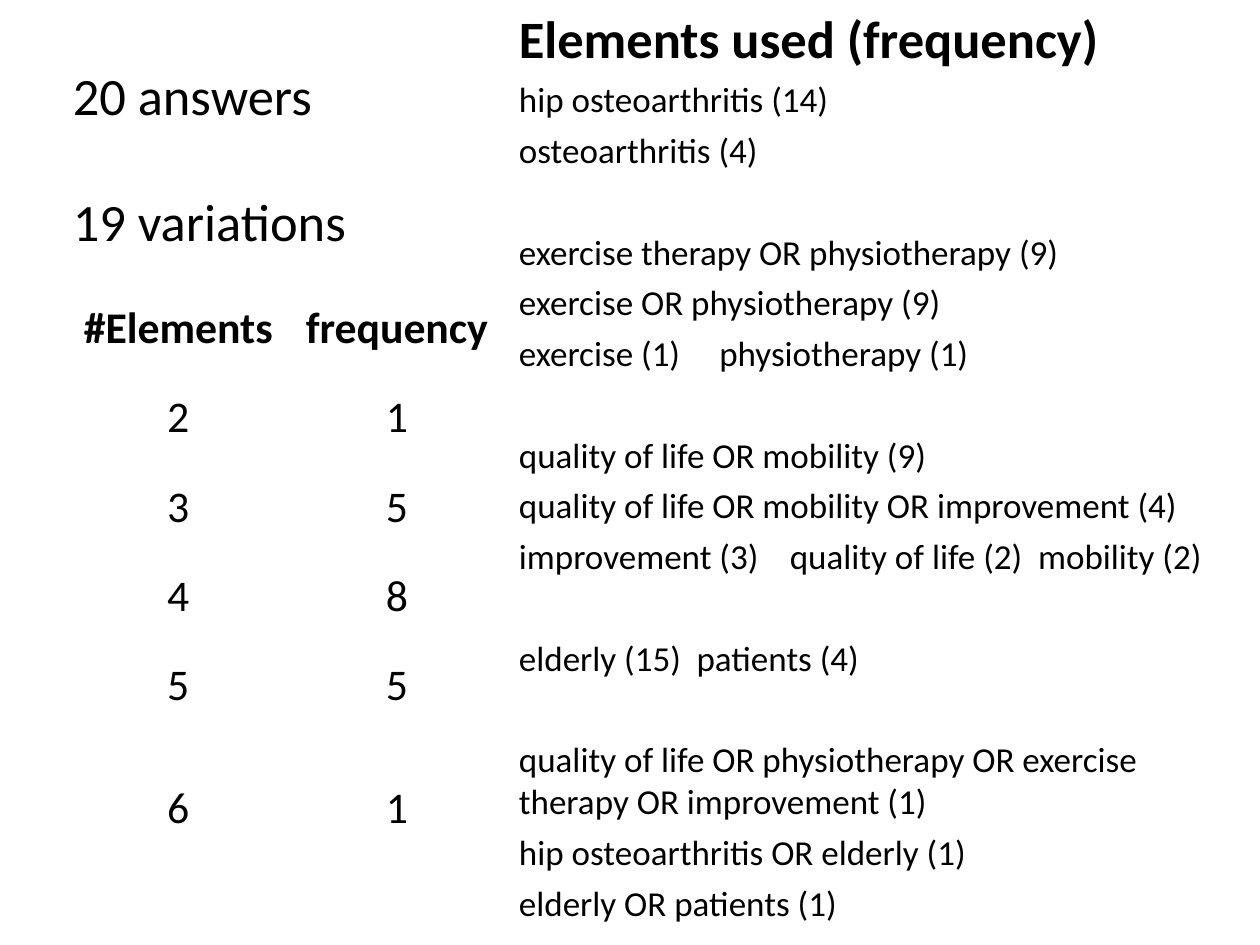
from dataclasses import dataclass

from lxml import etree
from pptx import Presentation
from pptx.dml.color import RGBColor
from pptx.enum.text import MSO_ANCHOR, PP_ALIGN
from pptx.oxml.ns import qn
from pptx.util import Inches, Pt

LEFT, CENTER = PP_ALIGN.LEFT, PP_ALIGN.CENTER
TOP = MSO_ANCHOR.TOP
BLANK_LAYOUT = 6


@dataclass(frozen=True)
class Theme:
    font: str = "Calibri"
    text: RGBColor = RGBColor(0, 0, 0)
    heading: int = 30
    table: int = 25
    body: int = 20
    gap: int = 5  # space after each element line
    group_gap: int = 34  # space after a group of element lines


THEME = Theme()

SUMMARY = ["20 answers", "19 variations"]

# Each cell lists its paragraphs
TABLE_ROWS = [
    (["#Elements"], ["frequency"]),
    (["2"], ["1"]),
    (["3"], ["5"]),
    (["4"], ["8"]),
    (["5", "6"], ["5", "1"]),
]

# Groups of lines; a line is a text with the tab stops (inches) it needs
ELEMENT_GROUPS = [
    [("hip osteoarthritis (14)", ()), ("osteoarthritis (4)", ())],
    [
        ("exercise therapy OR physiotherapy (9)", ()),
        ("exercise OR physiotherapy (9)", ()),
        ("exercise (1)\tphysiotherapy (1)", (1.59,)),
    ],
    [
        ("quality of life OR mobility (9)", ()),
        ("quality of life OR mobility OR improvement (4)", ()),
        ("improvement (3)\tquality of life (2)\tmobility (2)", (2.15, 4.12)),
    ],
    [("elderly (15)\tpatients (4)", (1.41,))],
    [
        ("quality of life OR physiotherapy OR exercise therapy OR improvement (1)", ()),
        ("hip osteoarthritis OR elderly (1)", ()),
        ("elderly OR patients (1)", ()),
    ],
]


def add_tab_stops(paragraph, stops):
    properties = paragraph._p.get_or_add_pPr()
    tab_list = etree.SubElement(properties, qn("a:tabLst"))
    for stop in stops:
        etree.SubElement(tab_list, qn("a:tab"), pos=str(Inches(stop)), algn="l")


def write(frame, text, *, size, bold=False, align=LEFT, before=0, after=0,
          line_spacing=1.0, tabs=()):
    """Write one paragraph, using the frame's empty first one when it is free."""
    paragraph = frame.paragraphs[0]
    if paragraph.runs:
        paragraph = frame.add_paragraph()
    paragraph.alignment = align
    paragraph.line_spacing = line_spacing
    paragraph.space_before = Pt(before)
    paragraph.space_after = Pt(after)
    if tabs:
        add_tab_stops(paragraph, tabs)
    run = paragraph.add_run()
    run.text = text
    run.font.name = THEME.font
    run.font.size = Pt(size)
    run.font.bold = bold
    run.font.color.rgb = THEME.text


def add_text_frame(slide, left, top, width, height):
    box = slide.shapes.add_textbox(
        Inches(left), Inches(top), Inches(width), Inches(height))
    box.text_frame.word_wrap = True
    return box.text_frame


def add_frequency_table(slide):
    table = slide.shapes.add_table(
        len(TABLE_ROWS), 2, Inches(0.56), Inches(2.33), Inches(3.47), Inches(4.27)).table
    table.first_row = table.horz_banding = False
    for column, width in zip(table.columns, (1.71, 1.76)):
        column.width = Inches(width)
    for row_index, row in enumerate(TABLE_ROWS):
        lines = max(len(texts) for texts in row)
        table.rows[row_index].height = Inches(0.71 if lines == 1 else 1.43)
        for column_index, texts in enumerate(row):
            cell = table.cell(row_index, column_index)
            cell.fill.background()
            cell.vertical_anchor = TOP
            cell.margin_left = cell.margin_right = Inches(0.07)
            cell.margin_top = cell.margin_bottom = 0
            for index, text in enumerate(texts):
                write(cell.text_frame, text, size=THEME.table, bold=row_index == 0,
                      align=CENTER, line_spacing=1.15, before=35 if index else 0)


def add_element_list(slide):
    frame = add_text_frame(slide, 4.02, 0, 5.98, 8.15)
    write(frame, "Elements used (frequency)", size=THEME.heading, bold=True,
          after=THEME.gap)
    for group in ELEMENT_GROUPS:
        for index, (text, tabs) in enumerate(group, start=1):
            after = THEME.group_gap if index == len(group) else THEME.gap
            write(frame, text, size=THEME.body, after=after, tabs=tabs)


def add_summary(slide):
    frame = add_text_frame(slide, 0.48, 0.45, 3.54, 1.62)
    for index, text in enumerate(SUMMARY):
        write(frame, text, size=THEME.heading, before=36 if index else 0)


def main():
    presentation = Presentation()
    presentation.slide_width = Inches(10)
    presentation.slide_height = Inches(7.5)
    slide = presentation.slides.add_slide(presentation.slide_layouts[BLANK_LAYOUT])

    # Left: number of elements per answer
    add_frequency_table(slide)
    # Right: elements and how often they were used
    add_element_list(slide)
    # Top left: totals
    add_summary(slide)

    presentation.save("out.pptx")


if __name__ == "__main__":
    main()
